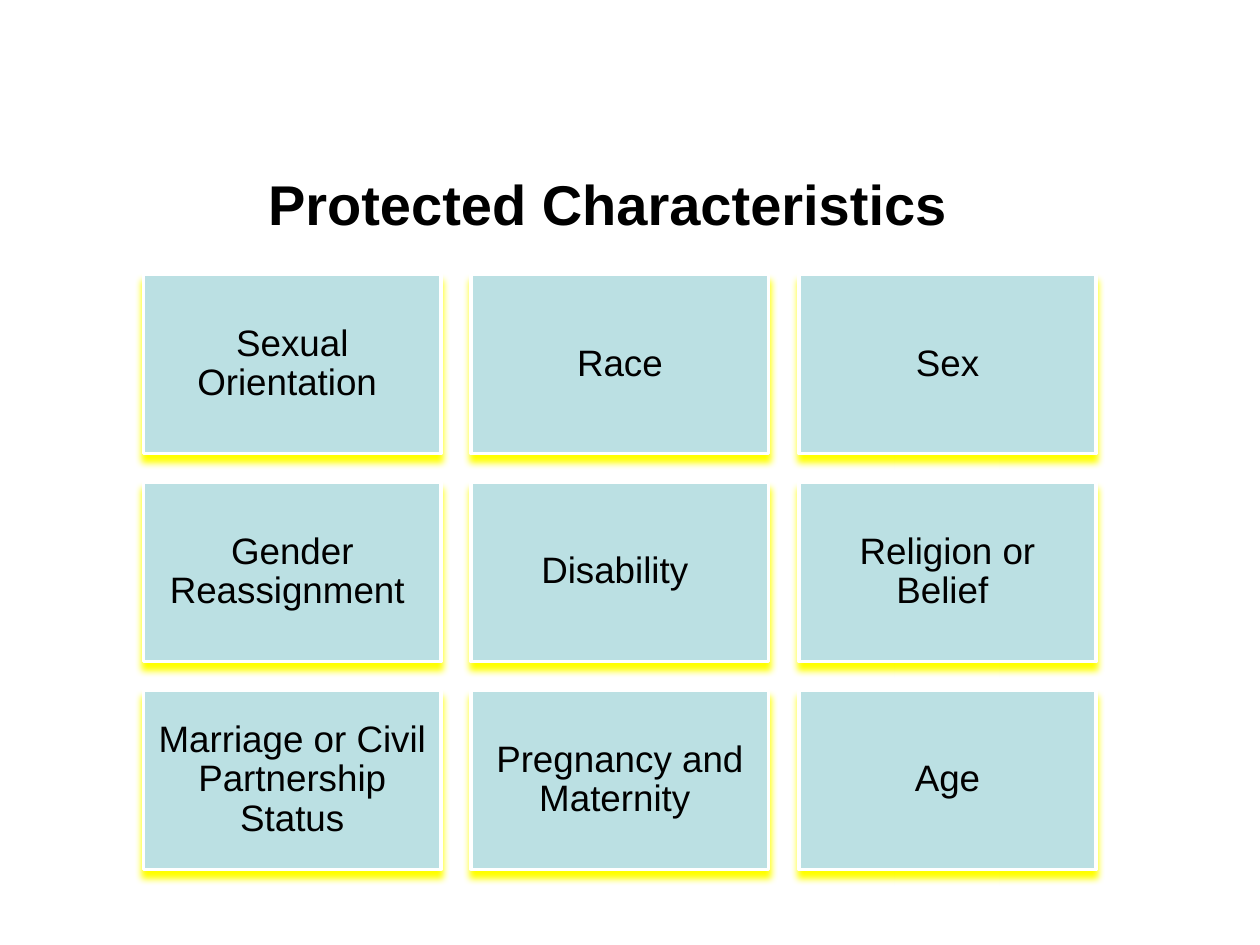
"""Build the Protected Characteristics slide: a title over a three-by-three grid of cards."""
from dataclasses import dataclass

from lxml import etree
from pptx import Presentation
from pptx import util as u
from pptx.dml.color import RGBColor
from pptx.enum import shapes, text
from pptx.oxml.ns import qn
from pptx.shapes.autoshape import Shape
from pptx.slide import Slide

COLUMNS = 3
LEFT, TOP = 1.14, 2.18
CARD_WIDTH, CARD_HEIGHT = 2.36, 1.42
COLUMN_STEP, ROW_STEP = 2.6, 1.65
CARD_FILL, CARD_LINE, SHADOW, INK = "BBE0E3", "FFFFFF", "FFFF00", "000000"
TITLE_FONT = {"name": "Arial", "size": u.Pt(32), "bold": True}
CARD_FONT = {"name": "Arial", "size": u.Pt(21), "bold": False}
CHARACTERISTICS = (
    "Sexual Orientation ", "Race", "Sex",
    "Gender Reassignment ", "Disability ", "Religion or Belief ",
    "Marriage or Civil Partnership Status", "Pregnancy and Maternity ", "Age",
)


@dataclass(frozen=True)
class Card:
    label: str
    left: float
    top: float


def color(value: str) -> RGBColor:
    return RGBColor.from_string(value)


def write_text(shape: Shape, content: str, font: dict, inset: float, spacing: float) -> None:
    frame = shape.text_frame
    frame.word_wrap = True
    frame.vertical_anchor = text.MSO_ANCHOR.MIDDLE
    for side in ("left", "right", "top", "bottom"):
        setattr(frame, f"margin_{side}", u.Inches(inset))
    paragraph = frame.paragraphs[0]
    paragraph.alignment = text.PP_ALIGN.CENTER
    paragraph.line_spacing = spacing
    run = paragraph.add_run()
    run.text = content
    for name, value in font.items():
        setattr(run.font, name, value)
    run.font.color.rgb = color(INK)


def add_shadow(shape: Shape) -> None:
    shape.shadow.inherit = False
    effects = shape._element.spPr.find(qn("a:effectLst"))
    shadow = etree.SubElement(
        effects, qn("a:outerShdw"), blurRad=str(u.Pt(4)), dist=str(u.Pt(4)),
        dir=str(90 * 60000), rotWithShape="0")
    etree.SubElement(shadow, qn("a:srgbClr"), val=SHADOW)


def draw_title(slide: Slide, title: str) -> None:
    box = slide.shapes.add_textbox(
        u.Inches(0.28), u.Inches(0.99), u.Inches(9.21), u.Inches(1.25))
    write_text(box, title, TITLE_FONT, inset=0.1, spacing=1.0)


def draw_card(slide: Slide, card: Card) -> None:
    shape = slide.shapes.add_shape(
        shapes.MSO_SHAPE.RECTANGLE, u.Inches(card.left), u.Inches(card.top),
        u.Inches(CARD_WIDTH), u.Inches(CARD_HEIGHT))
    shape.fill.solid()
    shape.fill.fore_color.rgb = color(CARD_FILL)
    shape.line.color.rgb = color(CARD_LINE)
    shape.line.width = u.Pt(2)
    add_shadow(shape)
    write_text(shape, card.label, CARD_FONT, inset=0.09, spacing=0.9)


def main() -> None:
    presentation = Presentation()
    presentation.slide_width, presentation.slide_height = u.Inches(10), u.Inches(7.5)
    slide = presentation.slides.add_slide(presentation.slide_layouts[6])
    draw_title(slide, "Protected Characteristics ")
    for index, label in enumerate(CHARACTERISTICS):
        row, column = divmod(index, COLUMNS)
        draw_card(slide, Card(label, LEFT + column * COLUMN_STEP, TOP + row * ROW_STEP))
    presentation.save("out.pptx")


if __name__ == "__main__":
    main()
